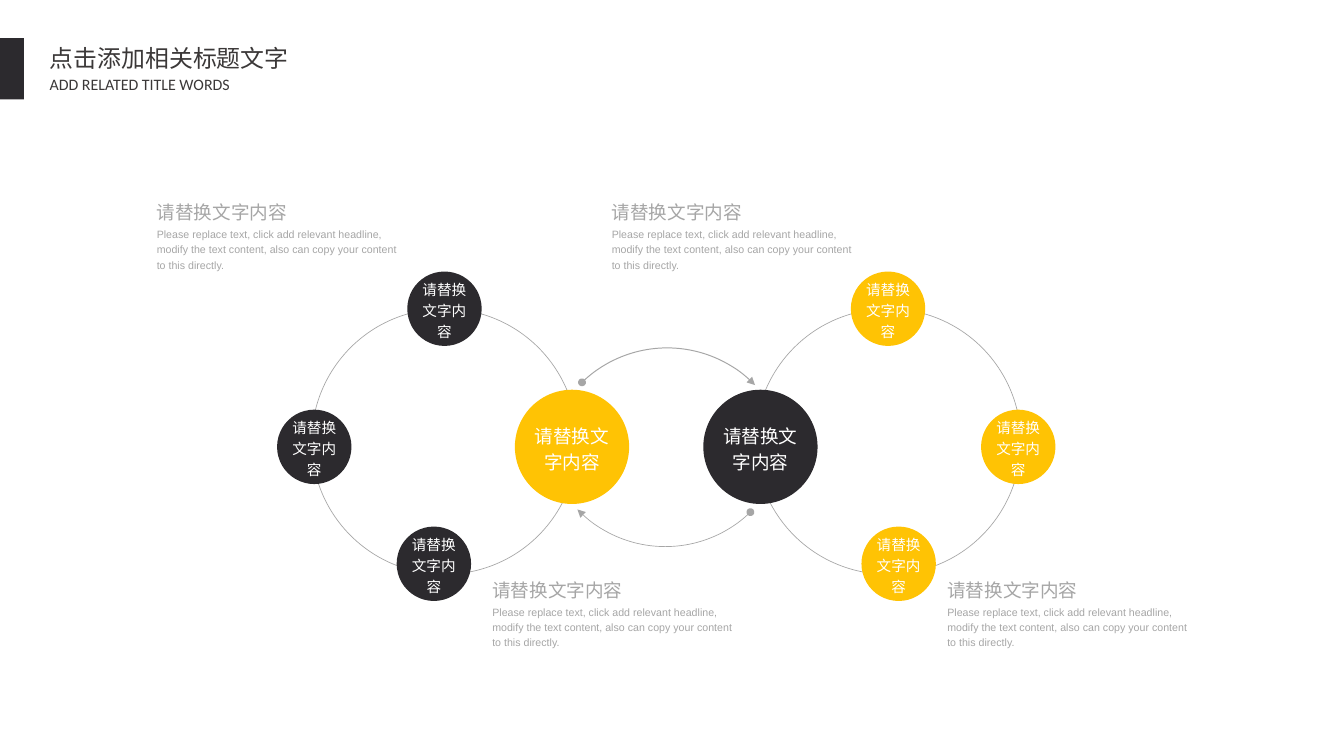
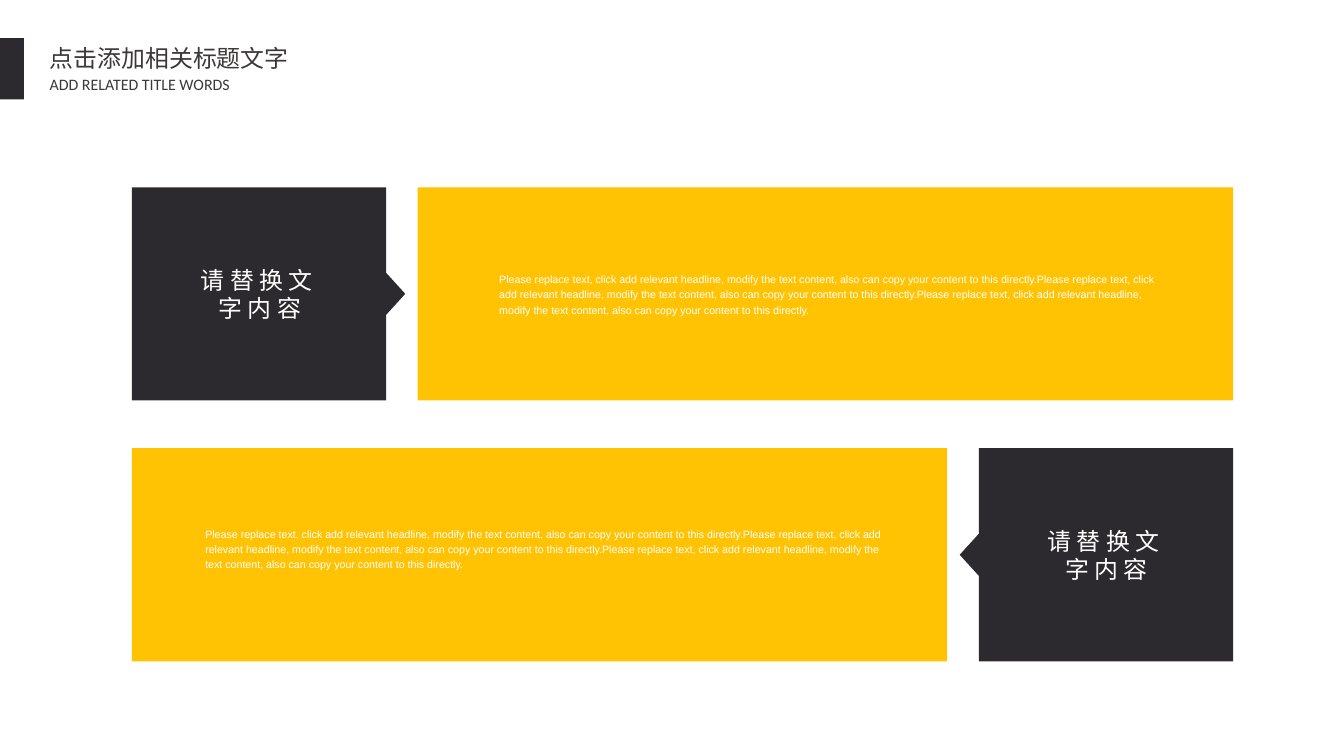
from pptx import Presentation
from pptx.dml.color import RGBColor
from pptx.enum.shapes import MSO_SHAPE
from pptx.enum.text import MSO_ANCHOR, MSO_AUTO_SIZE, PP_ALIGN
from pptx.oxml.ns import qn
from pptx.util import Inches, Pt
from lxml.etree import SubElement

WIDE, HIGH = 14.06, 7.91
DARK, GOLD, GREY, INK, WHITE = "2C2A2E", "FFC304", "A6A6A6", "3B3838", "FFFFFF"
LABEL = "请替换文字内容"
BODY = ("Please replace text, click add relevant headline, modify the text "
        "content, also can copy your content to this directly.")


def color(code):
    """Turn a hex string into a colour."""
    return RGBColor.from_string(code)


def write(frame, text, size, code, font="Arial", align=PP_ALIGN.LEFT,
          lead=1.0, track=0, pad=(0, 0), wrap=True, anchor=MSO_ANCHOR.TOP):
    """Put one styled run into a text frame."""
    frame.auto_size = MSO_AUTO_SIZE.NONE
    frame.word_wrap, frame.vertical_anchor = wrap, anchor
    frame.margin_left = frame.margin_right = Inches(pad[0])
    frame.margin_top = frame.margin_bottom = Inches(pad[1])
    para = frame.paragraphs[0]
    para.alignment, para.line_spacing = align, lead
    run = para.add_run()
    run.text = text
    run.font.name, run.font.size = font, Pt(size)
    run.font.color.rgb = color(code)
    props = run.font._element
    SubElement(props, qn("a:ea")).set("typeface", font)
    if track:
        props.set("spc", str(round(track * 100)))


def note(slide, box, text, size, code, **style):
    """Add a text box."""
    area = slide.shapes.add_textbox(*map(Inches, box))
    write(area.text_frame, text, size, code, **style)


def paint(shape, fill=None, line=None, width=0.5):
    """Set fill and line, and drop the shadow."""
    shape.shadow.inherit = False
    if fill:
        shape.fill.solid()
        shape.fill.fore_color.rgb = color(fill)
    else:
        shape.fill.background()
    if line:
        shape.line.color.rgb = color(line)
        shape.line.width = Pt(width)
    else:
        shape.line.fill.background()
    return shape


def draw(slide, kind, box, **look):
    """Add a painted preset shape."""
    return paint(slide.shapes.add_shape(kind, *map(Inches, box)), **look)


def band(slide):
    """Place the dark edge band on the layout that the slides share."""
    mark = draw(slide, MSO_SHAPE.RECTANGLE, (0, 0.4, 0.25, 0.64), fill=DARK)
    mark.element.nvSpPr.cNvPr.id = 20
    slide.slide_layout.shapes.element.append(mark.element)


def head(slide):
    """Fill the title and the line below it."""
    title = slide.shapes.title
    title.left, title.top, title.width, title.height = map(
        Inches, (0.41, 0.41, 2.74, 0.41))
    style = dict(pad=(0.11, 0.05), wrap=False)
    write(title.text_frame, "点击添加相关标题文字", 18, INK,
          font="Noto Sans CJK SC", **style)
    note(slide, (0.41, 0.73, 2.57, 0.31), "ADD RELATED TITLE WORDS", 12, INK,
         font="Calibri", **style)


def disc(slide, mid, span, fill, size):
    """Draw a labelled disc around its centre."""
    box = (mid[0] - span / 2, mid[1] - span / 2, span, span)
    shape = draw(slide, MSO_SHAPE.OVAL, box, fill=fill)
    write(shape.text_frame, LABEL, size, WHITE, align=PP_ALIGN.CENTER,
          lead=1.2, anchor=MSO_ANCHOR.MIDDLE)


def ring(slide, box, side, hub, node):
    """Draw a ring with its hub and three nodes, mirrored by side."""
    left, top, span, _ = box
    draw(slide, MSO_SHAPE.OVAL, box, line=GREY)
    spots = [(0.48, 0.02, 0.43, hub, 14)] + [
        (x, y, 0.28, node, 11)
        for x, y in ((-0.49, 0.02), (0, -0.5), (-0.04, 0.46))]
    for x, y, share, fill, size in spots:
        mid = (left + span * (0.5 + side * x), top + span * (0.5 + y))
        disc(slide, mid, span * share, fill, size)


def bow(slide, box, start, width):
    """Draw a quarter arc from a dot to an arrow tip."""
    arc = draw(slide, MSO_SHAPE.ARC, box, line=GREY, width=width)
    for i, angle in enumerate((start, start + 90)):
        arc.adjustments[i] = angle * 0.6
    line = arc.line._get_or_add_ln()
    for tag, kind in (("a:headEnd", "oval"), ("a:tailEnd", "triangle")):
        SubElement(line, qn(tag)).set("type", kind)


def entry(slide, left, top):
    """Write a heading with its text."""
    note(slide, (left, top, 1.37, 0.28), LABEL, 14, GREY, lead=1.2, wrap=False)
    note(slide, (left, top + 0.3, 2.58, 0.48), BODY, 8, GREY, lead=1.2)


def cycle(slide):
    """Build the two linked rings."""
    span = 2.78
    for left, side, hub, node in ((3.26, 1, GOLD, DARK), (7.9, -1, DARK, GOLD)):
        ring(slide, (left, 3.23, span, span), side, hub, node)
    bow(slide, (5.7, 3.64, 2.56, 2.56), 225.9, 0.75)
    bow(slide, (5.68, 3.16, 2.56, 2.56), 45.9, 0.5)
    for first, top in ((1.64, 2.06), (5.15, 6.01)):
        for step in range(2):
            entry(slide, first + step * 4.76, top)


def tab(slide, box, side):
    """Draw a dark tab whose notch points to the given side."""
    left, top, wide, high = box
    mid = left + wide / 2
    back, edge = mid - side * wide / 2, mid + side * wide / 2
    tip, core = edge + side * 0.2, top + high / 2
    points = [(back, top), (edge, top), (edge, core - 0.22), (tip, core),
              (edge, core + 0.22), (edge, top + high), (back, top + high)]
    first, *rest = [(Inches(x), Inches(y)) for x, y in points]
    pen = slide.shapes.build_freeform(*first, scale=1.0)
    pen.add_line_segments(rest, close=True)
    paint(pen.convert_to_shape(), fill=DARK)
    note(slide, (mid - 0.67, core - 0.3, 1.35, 0.61), LABEL, 18, WHITE,
         align=PP_ALIGN.CENTER, track=4.2)


def row(slide, box, side, inset):
    """Draw a tab and its gold pane, with the text inset by shares."""
    left, top, wide, high = box
    small, gap = 2.66, 0.33
    large = wide - small - gap
    pane = left + small + gap if side > 0 else left
    draw(slide, MSO_SHAPE.RECTANGLE, (pane, top, large, high), fill=GOLD)
    tab(slide, (left if side > 0 else left + large + gap, top, small, high), side)
    x, y, share = inset
    note(slide, (pane + large * x, top + high * y, large * share, 0.48),
         BODY * 3, 8, WHITE, lead=1.2)


def rows(slide):
    """Build the two mirrored rows."""
    plan = ((1, (0.1, 0.39, 0.81)), (-1, (0.09, 0.36, 0.84)))
    for i, (side, inset) in enumerate(plan):
        row(slide, (1.38, 1.96 + i * 2.73, 11.52, 2.23), side, inset)


def main():
    """Build and save the deck."""
    deck = Presentation()
    deck.slide_width, deck.slide_height = Inches(WIDE), Inches(HIGH)
    layout = deck.slide_layouts[5]
    for i, build in enumerate((cycle, rows)):
        slide = deck.slides.add_slide(layout)
        if i == 0:
            band(slide)
        head(slide)
        build(slide)
    deck.save("out.pptx")


if __name__ == "__main__":
    main()
